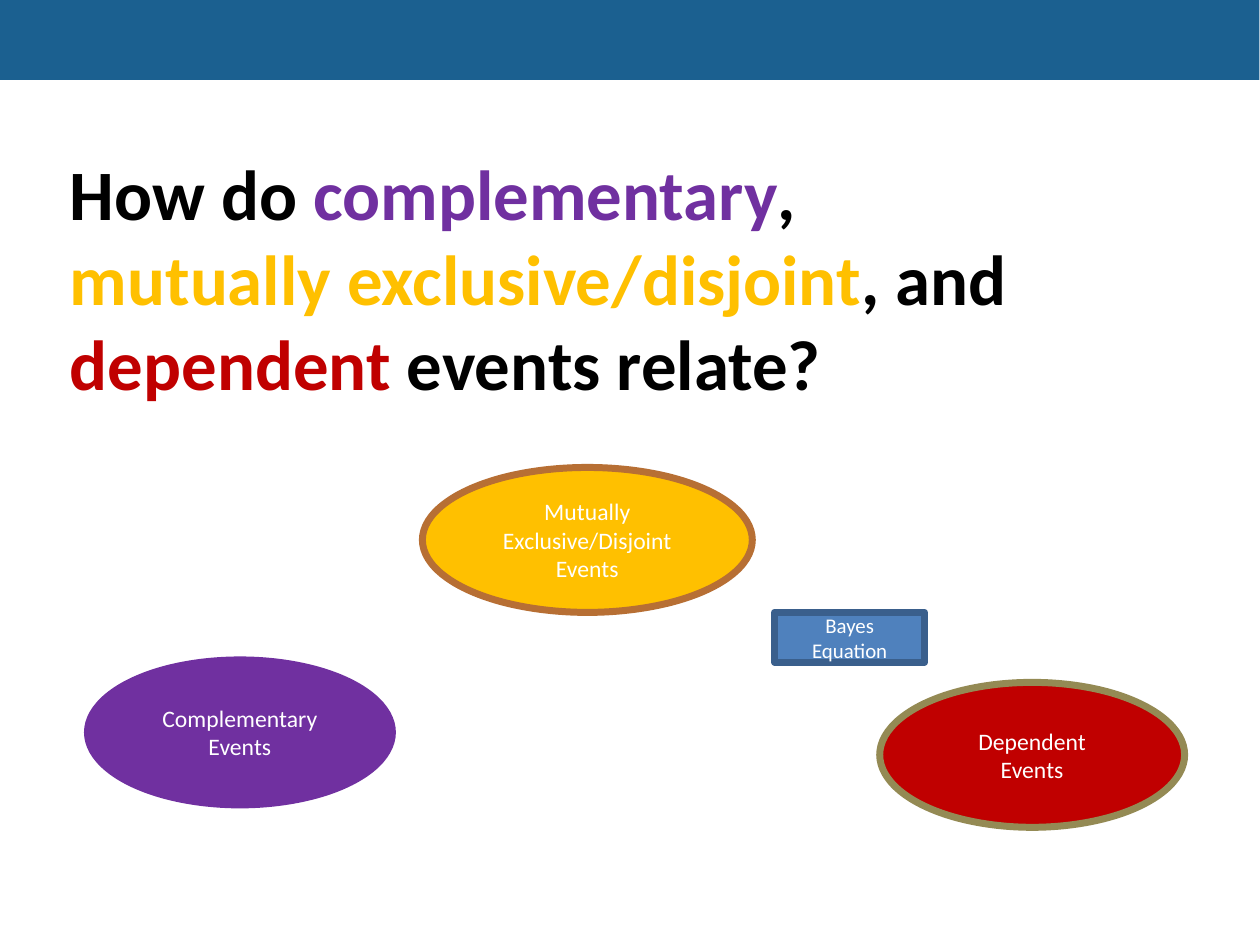
from dataclasses import dataclass

from pptx import Presentation
from pptx.dml.color import RGBColor
from pptx.enum.shapes import MSO_SHAPE
from pptx.enum.text import MSO_ANCHOR, MSO_AUTO_SIZE, PP_ALIGN
from pptx.slide import Slide
from pptx.util import Inches, Pt

FONT = "Calibri"
BLACK, WHITE = "000000", "FFFFFF"
PURPLE, AMBER, RED = "7030A0", "FFC000", "C00000"


@dataclass
class Node:
    text: str
    left: float
    top: float
    width: float
    height: float
    fill: str
    line: str
    size: float = 6.8
    kind: MSO_SHAPE = MSO_SHAPE.OVAL


QUESTION = [
    ("How do ", BLACK),
    ("complementary", PURPLE),
    (", ", BLACK),
    ("mutually exclusive/disjoint", AMBER),
    (", and ", BLACK),
    ("dependent", RED),
    (" events relate?", BLACK),
]

NODES = [
    Node("Dependent Events", 3.52, 2.73, 1.22, 0.58, RED, "948A54"),
    Node("Mutually Exclusive/Disjoint Events", 1.69, 1.87, 1.32, 0.58, AMBER, "B76F34"),
    Node("Complementary Events", 0.35, 2.64, 1.22, 0.58, PURPLE, PURPLE),
    Node("Bayes Equation", 3.1, 2.45, 0.6, 0.2, "4F81BD", "3A5F8C", 6, MSO_SHAPE.RECTANGLE),
]


def rgb(value: str) -> RGBColor:
    return RGBColor.from_string(value)


def add_banner(s: Slide) -> None:
    sp = s.shapes.add_shape(MSO_SHAPE.RECTANGLE, 0, 0, Inches(5.04), Inches(0.32))
    sp.shadow.inherit = False
    sp.fill.solid()
    sp.fill.fore_color.rgb = rgb("1B6090")
    sp.line.fill.background()


def fill_title(s: Slide) -> None:
    sp = s.shapes.title
    sp.left, sp.top = Inches(0.18), Inches(0.55)
    sp.width, sp.height = Inches(4.08), Inches(1.13)
    tf = sp.text_frame
    tf.word_wrap = True
    tf.auto_size = MSO_AUTO_SIZE.SHAPE_TO_FIT_TEXT
    tf.vertical_anchor = MSO_ANCHOR.TOP
    p = tf.paragraphs[0]
    p.alignment = PP_ALIGN.LEFT
    p.font.name, p.font.size, p.font.bold = FONT, Pt(20.4), True
    for text, color in QUESTION:
        r = p.add_run()
        r.text = text
        r.font.color.rgb = rgb(color)


def add_node(s: Slide, node: Node) -> None:
    sp = s.shapes.add_shape(
        node.kind, Inches(node.left), Inches(node.top), Inches(node.width), Inches(node.height)
    )
    sp.shadow.inherit = False
    sp.fill.solid()
    sp.fill.fore_color.rgb = rgb(node.fill)
    sp.line.color.rgb = rgb(node.line)
    sp.line.width = Pt(2)
    tf = sp.text_frame
    tf.word_wrap = True
    tf.vertical_anchor = MSO_ANCHOR.MIDDLE
    p = tf.paragraphs[0]
    p.text = node.text
    p.alignment = PP_ALIGN.CENTER
    p.font.name, p.font.size = FONT, Pt(node.size)
    p.font.color.rgb = rgb(WHITE)


def main() -> None:
    prs = Presentation()
    prs.slide_width, prs.slide_height = Pt(363), Pt(272.5)
    s = prs.slides.add_slide(prs.slide_layouts.get_by_name("Title Only"))
    add_banner(s)
    fill_title(s)
    for node in NODES:
        add_node(s, node)
    prs.save("out.pptx")


if __name__ == "__main__":
    main()
